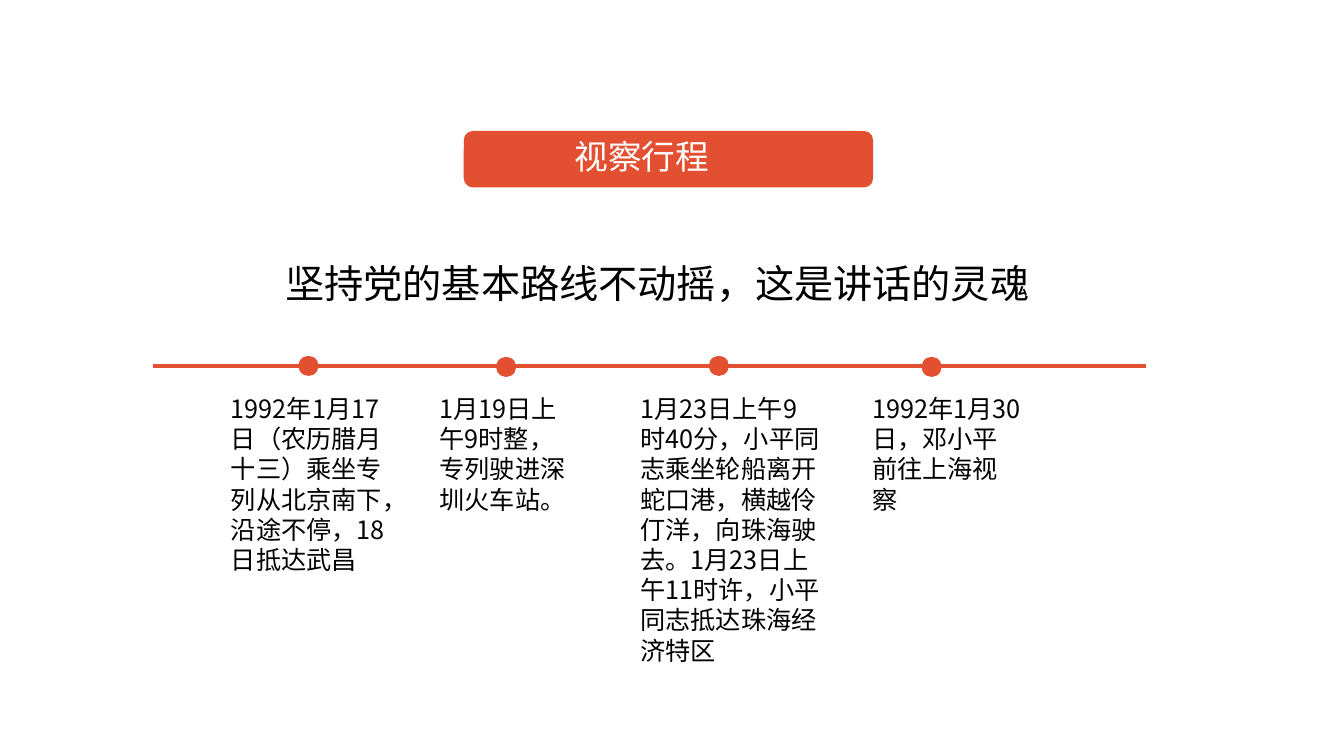
from lxml import etree
from pptx import Presentation
from pptx.dml.color import RGBColor
from pptx.enum.shapes import MSO_CONNECTOR, MSO_SHAPE
from pptx.enum.text import MSO_ANCHOR, MSO_AUTO_SIZE, PP_ALIGN
from pptx.oxml.ns import qn
from pptx.util import Inches, Pt

STRAIGHT = MSO_CONNECTOR.STRAIGHT
ROUNDED, OVAL = MSO_SHAPE.ROUNDED_RECTANGLE, MSO_SHAPE.OVAL
TOP, LEFT = MSO_ANCHOR.TOP, PP_ALIGN.LEFT
NO_FIT = MSO_AUTO_SIZE.NONE
FONT = "Noto Sans CJK SC"
COLORS = {"accent": "E24F31", "text": "000000", "light": "FFFFFF"}


def write_text(box, text, size=18, color="text", inset=0):
    frame = box.text_frame
    frame.word_wrap = True
    frame.auto_size = NO_FIT
    frame.vertical_anchor = TOP
    frame.margin_left = frame.margin_right = Inches(inset)
    frame.margin_top = frame.margin_bottom = Inches(inset / 2)
    para = frame.paragraphs[0]
    para.alignment = LEFT
    span = para.add_run()
    span.text = text
    span.font.size = Pt(size)
    span.font.name = FONT
    span.font.color.rgb = RGBColor.from_string(COLORS[color])
    east_asian = etree.Element(qn("a:ea"), typeface=FONT)
    span.font._element.find(qn("a:latin")).addnext(east_asian)


def add_solid(kind, left, top, width, height):
    shape = page.shapes.add_shape(kind, Inches(left), Inches(top), Inches(width), Inches(height))
    shape.shadow.inherit = False
    shape.fill.solid()
    shape.fill.fore_color.rgb = RGBColor.from_string(COLORS["accent"])
    shape.line.fill.background()
    return shape


deck = Presentation()
deck.slide_width, deck.slide_height = Inches(13.33), Inches(7.5)
page = deck.slides.add_slide(deck.slide_layouts[5])

headline = page.shapes.title
headline.left, headline.top = Inches(2.83), Inches(2.57)
headline.width, headline.height = Inches(7.86), Inches(0.47)
write_text(headline, "坚持党的基本路线不动摇，这是讲话的灵魂", size=28)

banner_top = 1.3
banner = add_solid(ROUNDED, 4.6, banner_top, 4.06, 0.56)
banner.adjustments[0] = 0.16
label = page.shapes.add_textbox(Inches(5.6), Inches(banner_top), Inches(1.98), Inches(0.5))
write_text(label, "视察行程", size=24, color="light", inset=0.1)

axis_y = Inches(3.63)
axis = page.shapes.add_connector(STRAIGHT, Inches(1.52), axis_y, Inches(11.37), axis_y)
axis.line.color.rgb = RGBColor.from_string(COLORS["accent"])
axis.line.width = Pt(3)
etree.SubElement(axis._element.spPr, qn("a:effectLst"))

dot_size = 0.2
stops = [
    (2.96, 3.53, 2.29, 1.53, 2.12, "1992年1月17日（农历腊月十三）乘坐专列从北京南下，沿途不停，18日抵达武昌"),
    (4.92, 3.54, 4.36, 1.32, 1.21, "1月19日上午9时整，专列驶进深圳火车站。"),
    (7.03, 3.53, 6.35, 1.78, 2.73,
     "1月23日上午9时40分，小平同志乘坐轮船离开蛇口港，横越伶仃洋，向珠海驶去。1月23日上午11时许，小平同志抵达珠海经济特区"),
    (9.14, 3.54, 8.65, 1.49, 1.21, "1992年1月30日，邓小平前往上海视察"),
]
for dot_left, dot_top, left, width, height, text in stops:
    add_solid(OVAL, dot_left, dot_top, dot_size, dot_size)
    note = page.shapes.add_textbox(Inches(left), Inches(3.9), Inches(width), Inches(height))
    write_text(note, text)

deck.save("out.pptx")
